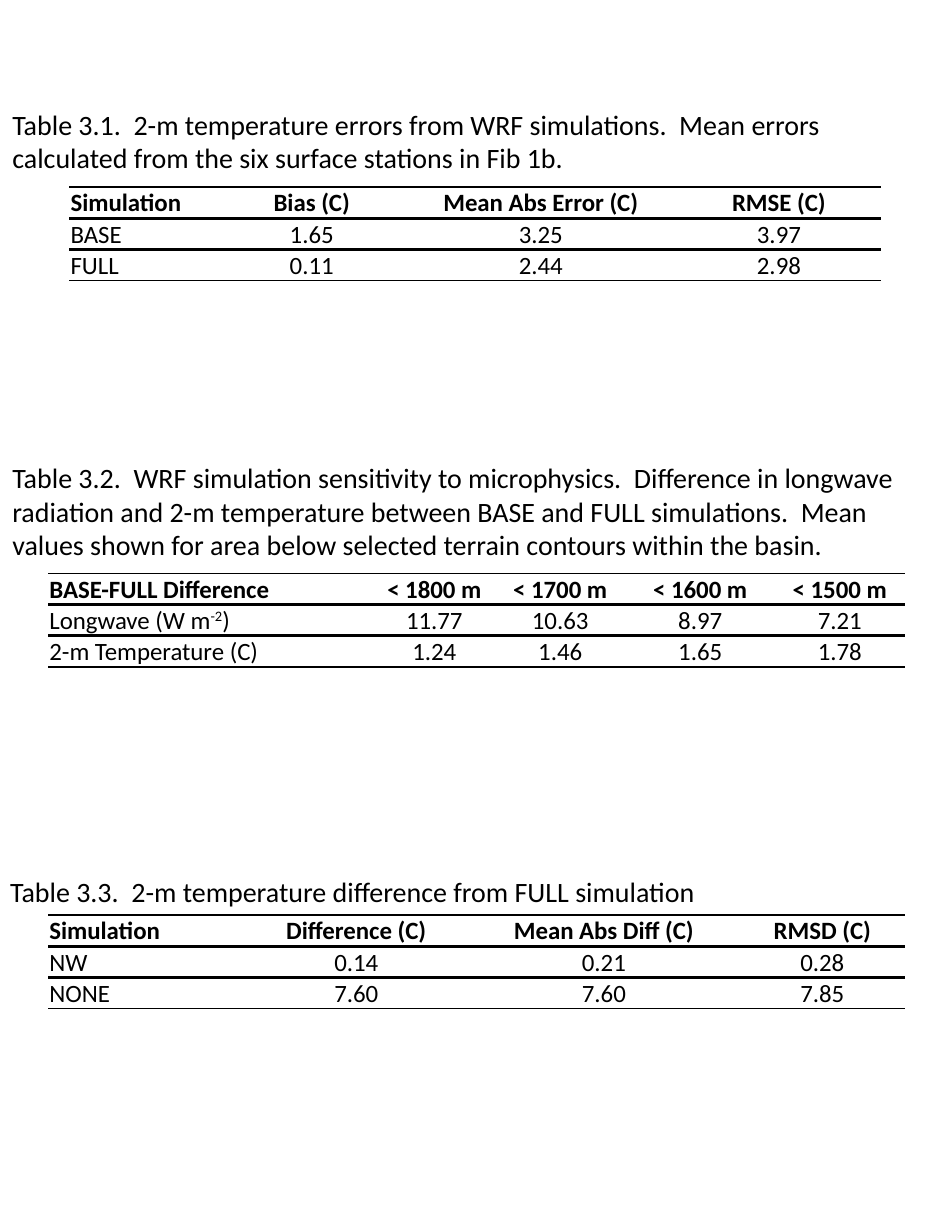
from lxml import etree
from pptx import Presentation
from pptx.dml.color import RGBColor
from pptx.enum.text import MSO_ANCHOR, PP_ALIGN
from pptx.oxml.ns import qn
from pptx.util import Cm, Pt

LEFT, CENTER = PP_ALIGN.LEFT, PP_ALIGN.CENTER
BOTTOM = MSO_ANCHOR.BOTTOM
FONT, INK = "Calibri", "000000"
WIDE, ROW = 21.64, 0.7
THIN, THICK = 1, 2.25

# Captions: text, left, top, height in cm
CAPTIONS = [
    ("Table 3.1.  2-m temperature errors from WRF simulations.  Mean errors "
     "calculated from the six surface stations in Fib 1b.", 0, 2.29, 1.83),
    ("Table 3.2.  WRF simulation sensitivity to microphysics.  Difference in "
     "longwave radiation and 2-m temperature between BASE and FULL "
     "simulations.  Mean values shown for area below selected terrain "
     "contours within the basin.", 0, 10.31, 2.59),
    ("Table 3.3.  2-m temperature difference from FULL simulation",
     -0.05, 19.69, 1.07),
]

# Tables: left, top, column widths in cm, rows; a tuple holds
# base text, superscript, base text
TABLES = [
    (1.57, 4.24, [3.38, 4.24, 6.15, 4.65], [
        ["Simulation", "Bias (C)", "Mean Abs Error (C)", "RMSE (C)"],
        ["BASE", "1.65", "3.25", "3.97"],
        ["FULL", "0.11", "2.44", "2.98"],
    ]),
    (1.09, 13, [7.39, 2.74, 2.97, 3.38, 2.95], [
        ["BASE-FULL Difference", "< 1800 m", "< 1700 m", "< 1600 m",
         "< 1500 m"],
        [("Longwave (W m", "-2", ")"), "11.77", "10.63", "8.97", "7.21"],
        ["2-m Temperature (C)", "1.24", "1.46", "1.65", "1.78"],
    ]),
    (1.09, 20.75, [4.45, 5.08, 6.15, 3.76], [
        ["Simulation", "Difference (C)", "Mean Abs Diff (C)", "RMSD (C)"],
        ["NW", "0.14", "0.21", "0.28"],
        ["NONE", "7.60", "7.60", "7.85"],
    ]),
]


def color(code):
    return RGBColor.from_string(code)


def add_run(para, text, size, bold=False):
    run = para.add_run()
    run.text = text
    font = run.font
    font.name, font.size, font.bold = FONT, Pt(size), bold
    font.color.rgb = color(INK)
    return run


def add_caption(slide, text, left, top, height):
    box = slide.shapes.add_textbox(Cm(left), Cm(top), Cm(WIDE), Cm(height))
    frame = box.text_frame
    frame.word_wrap = True
    frame.margin_left = frame.margin_right = Cm(0.28)
    frame.margin_top = frame.margin_bottom = Cm(0.14)
    add_run(frame.paragraphs[0], text, 18)


def rule(cell, side, width=0):
    """Draw one cell border, or hide it when width is zero."""
    props = cell._tc.get_or_add_tcPr()
    line = etree.SubElement(props, qn("a:ln" + side), w=str(Pt(width)))
    if width:
        fill = etree.SubElement(line, qn("a:solidFill"))
        etree.SubElement(fill, qn("a:srgbClr"), val=INK)
    else:
        etree.SubElement(line, qn("a:noFill"))


def fill_cell(cell, parts, align, bold, above, below):
    cell.margin_left = cell.margin_right = cell.margin_top = Cm(0.03)
    cell.margin_bottom = 0
    cell.vertical_anchor = BOTTOM
    for side, width in (("L", 0), ("R", 0), ("T", above), ("B", below)):
        rule(cell, side, width)
    cell.fill.background()
    para = cell.text_frame.paragraphs[0]
    para.alignment = align
    for i, part in enumerate(parts):
        run = add_run(para, part, 16, bold)
        if i == 1:
            run.font._element.set("baseline", "30000")


def add_grid(slide, left, top, widths, rows):
    count = len(rows)
    frame = slide.shapes.add_table(count, len(widths), Cm(left), Cm(top),
                                   Cm(sum(widths)), Cm(ROW * count))
    table = frame.table
    table.first_row = table.horz_banding = False
    for col, width in zip(table.columns, widths):
        col.width = Cm(width)
    for r, row in enumerate(rows):
        table.rows[r].height = Cm(ROW)
        above = THICK if r else THIN
        below = THICK if r < count - 1 else THIN
        for c, item in enumerate(row):
            parts = item if isinstance(item, tuple) else (item,)
            fill_cell(table.cell(r, c), parts, CENTER if c else LEFT,
                      r == 0, above, below)


def main():
    deck = Presentation()
    deck.slide_width, deck.slide_height = Cm(21.59), Cm(27.94)
    slide = deck.slides.add_slide(deck.slide_layouts[6])
    for caption in CAPTIONS:
        add_caption(slide, *caption)
    for grid in TABLES:
        add_grid(slide, *grid)
    deck.save("out.pptx")


if __name__ == "__main__":
    main()
